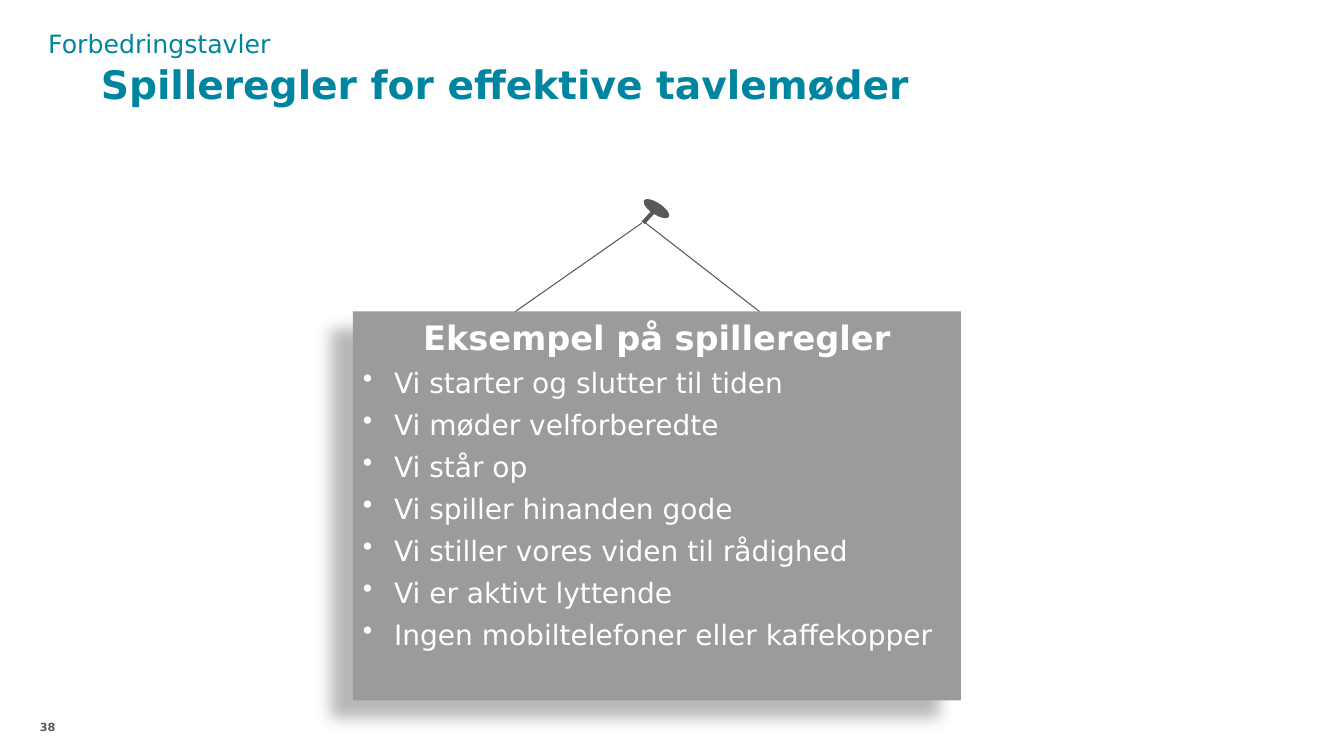
from dataclasses import dataclass
from typing import NamedTuple

from lxml.etree import SubElement
from pptx import Presentation
from pptx.dml.color import RGBColor
from pptx.enum.shapes import MSO_CONNECTOR, MSO_SHAPE
from pptx.enum.text import MSO_ANCHOR, MSO_AUTO_SIZE, PP_ALIGN
from pptx.oxml.ns import qn
from pptx.util import Emu, Inches, Pt


@dataclass(frozen=True)
class Theme:
    font: str = "DejaVu Sans"
    title: RGBColor = RGBColor(0x00, 0x85, 0xA1)
    topic: RGBColor = RGBColor(0x00, 0x85, 0xA0)
    ink: RGBColor = RGBColor(0x59, 0x59, 0x59)
    board: RGBColor = RGBColor(0x9B, 0x9B, 0x9B)
    board_text: RGBColor = RGBColor(0xFF, 0xFF, 0xFF)
    title_size: int = 28
    heading_size: int = 24
    rule_size: int = 20
    topic_size: int = 18
    number_size: int = 8


class Area(NamedTuple):
    column: float
    row: float
    columns: float
    rows: float


class Line(NamedTuple):
    start: tuple[float, float]
    end: tuple[float, float]
    width: float


THEME = Theme()
COLUMNS, ROWS = 133.3, 75
CELL = Inches(0.1)

TITLE = Area(10, 4, 105.5, 11.8)
TOPIC = Area(3.8, 2.3, 66.7, 4)
NUMBER = Area(1.6, 71.5, 3.9, 3.5)
BOARD = Area(35, 30.9, 60.3, 38.6)
PIN_HEAD = Area(63.7, 20.2, 2.8, 1)
PIN_NEEDLE = Line((63.8, 22.1), (64.8, 21), 3)
STRINGS = [
    Line((50.7, 31.2), (63.7, 22.1), 0.75),
    Line((75.7, 31.2), (64, 22.1), 0.75),
]
RULES = [
    "Vi starter og slutter til tiden",
    "Vi møder velforberedte",
    "Vi står op",
    "Vi spiller hinanden gode",
    "Vi stiller vores viden til rådighed",
    "Vi er aktivt lyttende",
    "Ingen mobiltelefoner eller kaffekopper",
]


def grid(cells: float) -> Emu:
    return Emu(round(cells * CELL))


def place(area: Area) -> list[Emu]:
    return [grid(cells) for cells in area]


def set_margins(frame, left=0, top=0, right=0, bottom=0) -> None:
    frame.margin_left, frame.margin_top = grid(left), grid(top)
    frame.margin_right, frame.margin_bottom = grid(right), grid(bottom)


def write(para, text: str, size: int, color: RGBColor, bold: bool = False,
          align: PP_ALIGN = PP_ALIGN.LEFT) -> None:
    para.text = text
    para.alignment = align
    para.font.name = THEME.font
    para.font.size = Pt(size)
    para.font.bold = bold
    para.font.color.rgb = color


def add_bullet(para) -> None:
    properties = para._p.get_or_add_pPr()
    properties.set("marL", str(grid(3.1)))
    properties.set("indent", str(grid(-3.1)))
    SubElement(properties, qn("a:buChar"), char="•")


def add_line(shapes, line: Line) -> None:
    ends = [grid(cells) for cells in (*line.start, *line.end)]
    connector = shapes.add_connector(MSO_CONNECTOR.STRAIGHT, *ends)
    connector.line.color.rgb = THEME.ink
    connector.line.width = Pt(line.width)
    SubElement(connector._element.spPr, qn("a:effectLst"))


def add_soft_shadow(shape) -> None:
    """Cast a blurred shadow down and to the left."""
    effects = SubElement(shape._element.spPr, qn("a:effectLst"))
    shadow = SubElement(effects, qn("a:outerShdw"), blurRad=str(Pt(11.8)),
                        dist=str(Pt(19.7)), dir=str(141 * 60000),
                        algn="ctr", rotWithShape="0")
    color = SubElement(shadow, qn("a:srgbClr"), val="000000")
    SubElement(color, qn("a:alpha"), val="28000")


def add_title(slide) -> None:
    title = slide.shapes.title
    title.left, title.top, title.width, title.height = place(TITLE)
    frame = title.text_frame
    frame.auto_size = MSO_AUTO_SIZE.NONE
    frame.vertical_anchor = MSO_ANCHOR.BOTTOM
    set_margins(frame, bottom=5.1)
    para = frame.paragraphs[0]
    write(para, "Spilleregler for effektive tavlemøder",
          THEME.title_size, THEME.title, bold=True)
    para.line_spacing = 0.9


def add_topic(slide) -> None:
    frame = slide.shapes.add_textbox(*place(TOPIC)).text_frame
    frame.word_wrap = True
    frame.auto_size = MSO_AUTO_SIZE.SHAPE_TO_FIT_TEXT
    write(frame.paragraphs[0], "Forbedringstavler",
          THEME.topic_size, THEME.topic)


def add_page_number(slide) -> None:
    frame = slide.shapes.add_textbox(*place(NUMBER)).text_frame
    frame.word_wrap = True
    set_margins(frame)
    write(frame.paragraphs[0], "38", THEME.number_size, THEME.ink,
          bold=True, align=PP_ALIGN.RIGHT)


def add_pin(slide) -> None:
    pin = slide.shapes.add_group_shape()
    add_line(pin.shapes, PIN_NEEDLE)
    head = pin.shapes.add_shape(MSO_SHAPE.OVAL, *place(PIN_HEAD))
    head.rotation = 33.5
    head.shadow.inherit = False
    head.fill.solid()
    head.fill.fore_color.rgb = THEME.ink
    head.line.color.rgb = THEME.ink
    head.line.width = Pt(1)


def add_board(slide) -> None:
    board = slide.shapes.add_shape(MSO_SHAPE.RECTANGLE, *place(BOARD))
    board.fill.solid()
    board.fill.fore_color.rgb = THEME.board
    board.line.fill.background()
    add_soft_shadow(board)
    frame = board.text_frame
    frame.word_wrap = True
    frame.vertical_anchor = MSO_ANCHOR.TOP
    heading = frame.paragraphs[0]
    write(heading, "Eksempel på spilleregler", THEME.heading_size,
          THEME.board_text, bold=True, align=PP_ALIGN.CENTER)
    heading.space_after = Pt(6)
    for rule in RULES:
        para = frame.add_paragraph()
        add_bullet(para)
        write(para, rule, THEME.rule_size, THEME.board_text)
        para.space_after = Pt(6)


def main() -> None:
    deck = Presentation()
    deck.slide_width, deck.slide_height = grid(COLUMNS), grid(ROWS)
    slide = deck.slides.add_slide(deck.slide_layouts.get_by_name("Title Only"))
    add_title(slide)
    for string in STRINGS:
        add_line(slide.shapes, string)
    add_pin(slide)
    add_topic(slide)
    add_page_number(slide)
    add_board(slide)
    deck.save("out.pptx")


if __name__ == "__main__":
    main()
